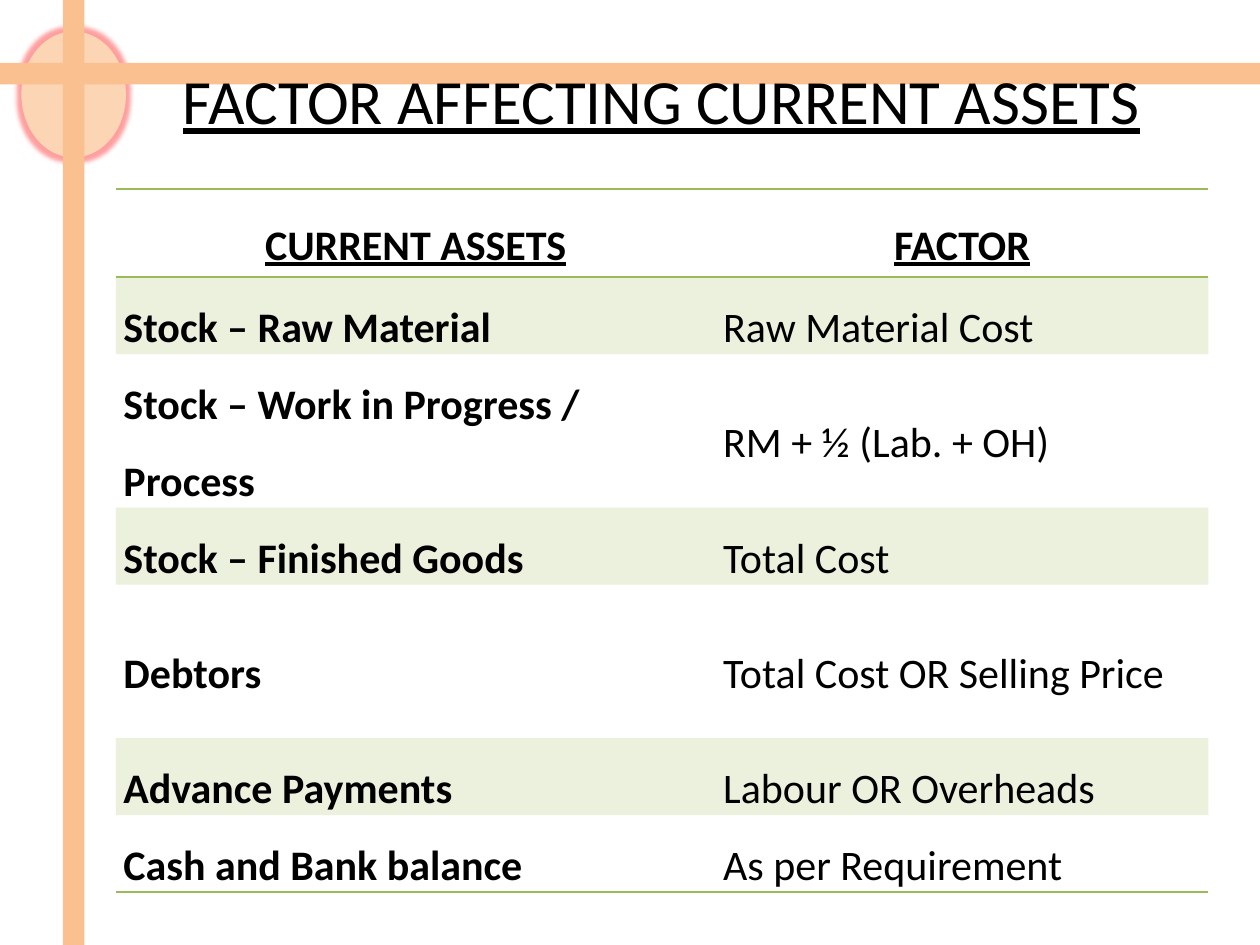
from dataclasses import dataclass

import lxml.etree
import pptx
import pptx.dml.color
import pptx.enum.shapes
import pptx.enum.text
import pptx.oxml
import pptx.oxml.ns
import pptx.util

Inches = pptx.util.Inches
Pt = pptx.util.Pt
RGBColor = pptx.dml.color.RGBColor
Kind = pptx.enum.shapes.MSO_SHAPE
Align = pptx.enum.text.PP_ALIGN
Anchor = pptx.enum.text.MSO_ANCHOR
qn = pptx.oxml.ns.qn

BLACK = RGBColor(0x00, 0x00, 0x00)
PEACH = RGBColor(0xFC, 0xD5, 0xB5)
ORANGE = RGBColor(0xFA, 0xC0, 0x90)
GREEN = RGBColor(0x9B, 0xBB, 0x59)
GLOW = RGBColor(0xFF, 0x80, 0x80)
FONT = "Calibri"
PLAIN_TABLE_STYLE = "{2D5ABB26-0587-4C30-8999-92F81FD0307C}"


@dataclass
class Ornament:
    kind: Kind
    left: float
    top: float
    width: float
    height: float
    color: RGBColor
    glow: float = 0


@dataclass
class Row:
    asset: str
    factor: str
    height: float = 0.61


ORNAMENTS = [
    Ornament(Kind.OVAL, 0.17, 0.25, 0.83, 1, PEACH, glow=5),
    Ornament(Kind.RECTANGLE, 0.5, 0, 0.17, 7.5, ORANGE),
    Ornament(Kind.RECTANGLE, 0, 0.5, 10, 0.17, ORANGE),
]
ROWS = [
    Row("CURRENT ASSETS", "FACTOR", 0.7),
    Row("Stock – Raw Material", "Raw Material Cost"),
    Row("Stock – Work in Progress / Process", "RM + ½ (Lab. + OH)", 1.22),
    Row("Stock – Finished Goods", "Total Cost"),
    Row("Debtors", "Total Cost OR Selling Price", 1.22),
    Row("Advance Payments", "Labour OR Overheads"),
    Row("Cash and Bank balance", "As per Requirement"),
]
COLUMN_WIDTHS = [4.76, 3.91]


def add_element(parent, tag: str, **attributes: str):
    return lxml.etree.SubElement(parent, qn(tag), attributes)


def draw_ornament(group, item: Ornament) -> None:
    shape = group.shapes.add_shape(
        item.kind, Inches(item.left), Inches(item.top), Inches(item.width), Inches(item.height))
    shape.fill.solid()
    shape.fill.fore_color.rgb = item.color
    shape.line.fill.background()
    shape.shadow.inherit = False
    if item.glow:
        effects = shape.element.spPr.find(qn("a:effectLst"))
        glow = add_element(effects, "a:glow", rad=str(Pt(item.glow)))
        color = add_element(glow, "a:srgbClr", val=str(GLOW))
        add_element(color, "a:alpha", val="75000")


def write_text(frame, text: str, size: float, align: Align,
               bold: bool = False, underline: bool = False):
    para = frame.paragraphs[0]
    para.alignment = align
    para.line_spacing = 1.5
    para.space_before = Pt(0)
    para.space_after = Pt(8)
    span = para.add_run()
    span.text = text
    span.font.name = FONT
    span.font.size = Pt(size)
    span.font.bold = bold
    span.font.underline = underline
    span.font.color.rgb = BLACK
    return para


def draw_border(cell, tag: str) -> None:
    properties = cell._tc.get_or_add_tcPr()
    line = add_element(properties, tag, w=str(Pt(1)))
    fill = add_element(line, "a:solidFill")
    add_element(fill, "a:srgbClr", val=str(GREEN))


def fill_cell(cell, shaded: bool) -> None:
    if not shaded:
        cell.fill.background()
        return
    cell.fill.solid()
    cell.fill.fore_color.rgb = GREEN
    color = cell._tc.tcPr.find(".//" + qn("a:solidFill") + "/" + qn("a:srgbClr"))
    add_element(color, "a:alpha", val="20000")


def draw_table(page) -> None:
    frame = page.shapes.add_table(
        len(ROWS), len(COLUMN_WIDTHS), Inches(0.92), Inches(1.5),
        Inches(sum(COLUMN_WIDTHS)), Inches(sum(row.height for row in ROWS)))
    table = frame.table
    table.first_row = False
    table.horz_banding = False
    table._tbl.tblPr.find(qn("a:tableStyleId")).text = PLAIN_TABLE_STYLE
    for column, width in zip(table.columns, COLUMN_WIDTHS):
        column.width = Inches(width)

    for index, row in enumerate(ROWS):
        table.rows[index].height = Inches(row.height)
        header = index == 0
        for column, text in enumerate((row.asset, row.factor)):
            cell = table.cell(index, column)
            cell.vertical_anchor = Anchor.MIDDLE
            cell.margin_left = cell.margin_right = Inches(0.06)
            cell.margin_top = cell.margin_bottom = 0
            write_text(cell.text_frame, text, 24, Align.CENTER if header else Align.LEFT,
                       bold=header or column == 0, underline=header)
            if header:
                draw_border(cell, "a:lnT")
            if header or index == len(ROWS) - 1:
                draw_border(cell, "a:lnB")
            fill_cell(cell, shaded=index % 2 == 1)


def draw_title(page) -> None:
    box = page.shapes.title
    box.left, box.top = Inches(0.48), Inches(0.14)
    box.width, box.height = Inches(9.29), Inches(1.01)
    box.text_frame.vertical_anchor = Anchor.TOP
    box.text_frame.auto_size = pptx.enum.text.MSO_AUTO_SIZE.SHAPE_TO_FIT_TEXT
    para = write_text(box.text_frame, "FACTOR AFFECTING CURRENT ASSETS", 36,
                      Align.CENTER, underline=True)
    para._p.get_or_add_pPr().set("marL", str(Inches(0.25)))
    # Bring the title in front of the ornaments
    page.shapes.element.append(box.element)


def main() -> None:
    deck = pptx.Presentation()
    deck.slide_width, deck.slide_height = Inches(10), Inches(7.5)
    page = deck.slides.add_slide(deck.slide_layouts[5])

    # Crossed bars over a glowing disc
    group = page.shapes.add_group_shape()
    for item in ORNAMENTS:
        draw_ornament(group, item)

    # Title and table
    draw_title(page)
    draw_table(page)
    deck.save("out.pptx")


if __name__ == "__main__":
    main()
